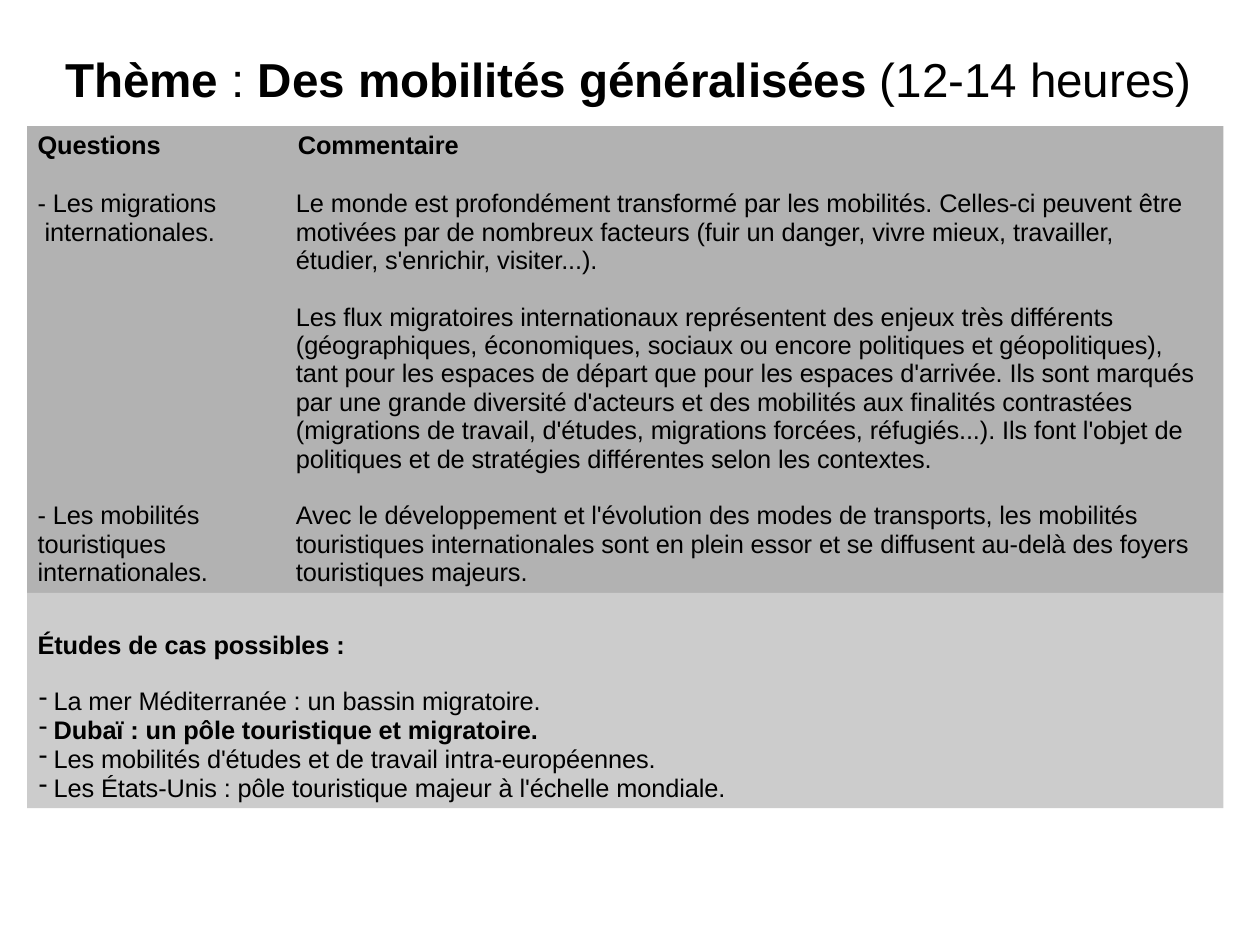
from lxml import etree
from pptx import Presentation
from pptx import util as u
from pptx.dml import color
from pptx.enum import shapes, text
from pptx.oxml import ns

FRAME = {
    "word_wrap": True,
    "auto_size": text.MSO_AUTO_SIZE.NONE,
    "vertical_anchor": text.MSO_ANCHOR.TOP,
    "margin_left": u.Inches(0.01),
    "margin_right": 0,
    "margin_bottom": 0,
}
SINGLE = {"alignment": text.PP_ALIGN.LEFT, "space_before": u.Pt(1)}
BODY = {**SINGLE, "space_before": u.Pt(2.6), "line_spacing": u.Pt(17.9)}
ITEM = {**SINGLE, "space_before": u.Pt(0), "line_spacing": u.Pt(18.3)}
FIRST_ITEM = {**ITEM, "space_before": u.Pt(17)}

LEFT, MIDDLE, RIGHT = 2.15, 22.7, 97.1
TOP, SPLIT, BOTTOM = 13.35, 62.8, 85.6
QUESTION, COMMENT = 2.9, 23.4
FIRST_ROW, SECOND_ROW, THIRD_ROW = 19.6, 31.6, 52.65

PANELS = [
    (LEFT, TOP, MIDDLE, SPLIT, "B2B2B2"),
    (MIDDLE, TOP, RIGHT, SPLIT, "B2B2B2"),
    (LEFT, SPLIT, RIGHT, BOTTOM, "CCCCCC"),
]
HEADINGS = [(QUESTION, "*Questions*"), (COMMENT + 0.15, "*Commentaire*")]
PASSAGES = [
    (QUESTION, FIRST_ROW, 17, 6.5, "- Les migrations\n internationales."),
    (QUESTION, THIRD_ROW, 17, 9.6, "- Les mobilités\ntouristiques\ninternationales."),
    (COMMENT, FIRST_ROW, 73, 9.6,
     "Le monde est profondément transformé par les mobilités. Celles-ci peuvent être\n"
     "motivées par de nombreux facteurs (fuir un danger, vivre mieux, travailler,\n"
     "étudier, s'enrichir, visiter...)."),
    (COMMENT, SECOND_ROW, 73, 18.6,
     "Les flux migratoires internationaux représentent des enjeux très différents\n"
     "(géographiques, économiques, sociaux ou encore politiques et géopolitiques),\n"
     "tant pour les espaces de départ que pour les espaces d'arrivée. Ils sont marqués\n"
     "par une grande diversité d'acteurs et des mobilités aux finalités contrastées\n"
     "(migrations de travail, d'études, migrations forcées, réfugiés...). Ils font l'objet de\n"
     "politiques et de stratégies différentes selon les contextes."),
    (COMMENT, THIRD_ROW, 73, 9.6,
     "Avec le développement et l'évolution des modes de transports, les mobilités\n"
     "touristiques internationales sont en plein essor et se diffusent au-delà des foyers\n"
     "touristiques majeurs."),
]
CASE_STUDIES = [
    ("*Études de cas possibles :*", SINGLE),
    ("La mer Méditerranée : un bassin migratoire.", FIRST_ITEM),
    ("*Dubaï : un pôle touristique et migratoire.*", ITEM),
    ("Les mobilités d'études et de travail intra-européennes.", ITEM),
    ("Les États-Unis : pôle touristique majeur à l'échelle mondiale.", ITEM),
]


def paint(value):
    return color.RGBColor.from_string(value)


def apply(target, formats):
    for name, value in formats.items():
        setattr(target, name, value)


class Sheet:
    def __init__(self, deck):
        self.deck = deck
        self.page = deck.slides.add_slide(deck.slide_layouts[5])
        self.font = {"name": "Arial", "size": u.Pt(16)}

    def place(self, left, top, width, height):
        across, down = self.deck.slide_width, self.deck.slide_height
        return [round(share * side / 100) for share, side in
                zip((left, top, width, height), (across, down, across, down))]

    def panel(self, left, top, right, bottom, fill):
        area = self.place(left, top, right - left, bottom - top)
        box = self.page.shapes.add_shape(shapes.MSO_SHAPE.RECTANGLE, *area)
        box.shadow.inherit = False
        box.fill.solid()
        box.fill.fore_color.rgb = paint(fill)
        box.line.fill.background()

    def title(self, area, content):
        box = self.page.shapes.title
        names = ("left", "top", "width", "height")
        apply(box, dict(zip(names, self.place(*area))))
        self.fill_text(box, [(content, SINGLE)], size=u.Pt(30))

    def text(self, area, paras, inset=0.01):
        box = self.page.shapes.add_textbox(*self.place(*area))
        self.fill_text(box, paras, inset)

    def fill_text(self, box, paras, inset=0.01, **font):
        frame = box.text_frame
        apply(frame, {**FRAME, "margin_top": u.Inches(inset)})
        for index, (content, formats) in enumerate(paras):
            para = frame.add_paragraph() if index else frame.paragraphs[0]
            apply(para, formats)
            if formats in (ITEM, FIRST_ITEM):
                self.bullet(para)
            for row, line in enumerate(content.split("\n")):
                if row:
                    para.add_line_break()
                self.spans(para, line, font)

    def spans(self, para, line, font):
        for part, words in enumerate(line.split("*")):
            if words:
                span = para.add_run()
                span.text = words
                apply(span.font, {**self.font, **font, "bold": part % 2 == 1})
                span.font.color.rgb = paint("000000")
                span._r.get_or_add_rPr().set("spc", "-5")

    def bullet(self, para):
        properties = para._p.get_or_add_pPr()
        properties.set("marL", str(u.Inches(0.14)))
        properties.set("indent", str(-u.Inches(0.13)))
        etree.SubElement(properties, ns.qn("a:buChar")).set("char", "-")


def main():
    deck = Presentation()
    deck.slide_width, deck.slide_height = u.Inches(11.03), u.Inches(8.26)
    sheet = Sheet(deck)
    for panel in PANELS:
        sheet.panel(*panel)
    sheet.title((5.1, 5.2, 90.2, 6.4),
                "*Thème* : *Des mobilités généralisées* (12-14 heures)")
    for left, heading in HEADINGS:
        sheet.text((left, 13.55, 17, 3.5), [(heading, SINGLE)])
    for left, top, width, height, content in PASSAGES:
        sheet.text((left, top, width, height), [(content, BODY)], inset=0.04)
    sheet.text((QUESTION, 66.5, 60, 18.6), CASE_STUDIES)
    deck.save("out.pptx")


if __name__ == "__main__":
    main()
